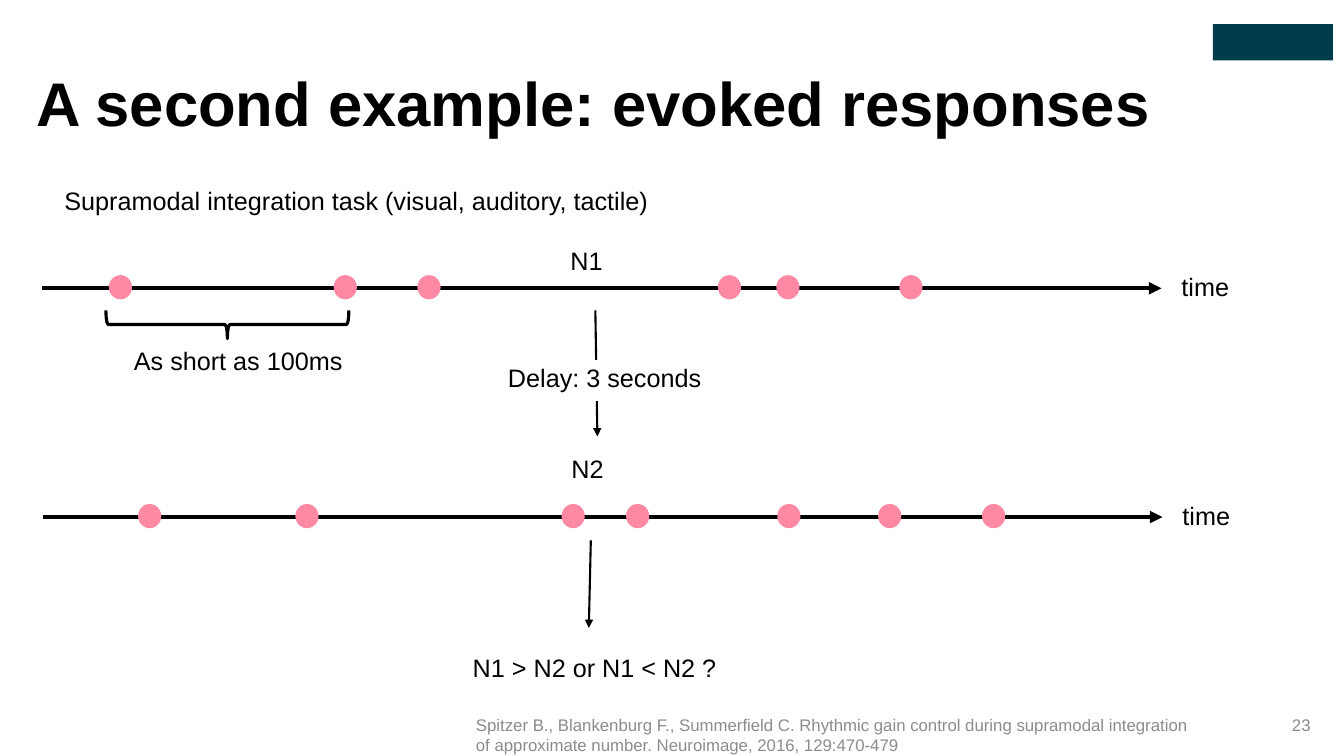
from dataclasses import dataclass

from lxml import etree
from pptx import Presentation
from pptx.dml.color import RGBColor
from pptx.enum.shapes import MSO_CONNECTOR, MSO_SHAPE
from pptx.enum.text import MSO_ANCHOR, MSO_AUTO_SIZE, PP_ALIGN
from pptx.oxml.ns import qn
from pptx.util import Inches, Pt

STRAIGHT = MSO_CONNECTOR.STRAIGHT
RECTANGLE, OVAL, BRACE = MSO_SHAPE.RECTANGLE, MSO_SHAPE.OVAL, MSO_SHAPE.RIGHT_BRACE
TOP, NO_FIT = MSO_ANCHOR.TOP, MSO_AUTO_SIZE.NONE
LEFT, RIGHT = PP_ALIGN.LEFT, PP_ALIGN.RIGHT
TITLE_ONLY = 5


@dataclass(frozen=True)
class Theme:
    font: str = "Arial"
    ink: RGBColor = RGBColor(0, 0, 0)
    paper: RGBColor = RGBColor(255, 255, 255)
    stimulus: RGBColor = RGBColor(0xFF, 0x88, 0xA4)
    badge: RGBColor = RGBColor(0, 0x3D, 0x4C)
    muted: RGBColor = RGBColor(0x8C, 0x8C, 0x8C)
    title_size: int = 44
    body_size: int = 18
    footer_size: int = 12
    axis_width: float = 3
    brace_width: float = 2.25
    arrow_width: float = 1.5


@dataclass(frozen=True)
class Box:
    """A region in inches; inner boxes are given relative to its corner."""
    left: float
    top: float
    width: float
    height: float

    def inner(self, left, top, width, height):
        return Box(self.left + left, self.top + top, width, height)

    def emu(self):
        return [Inches(value) for value in (self.left, self.top, self.width, self.height)]


THEME = Theme()
DOT_WIDTH, DOT_HEIGHT = 0.23, 0.24
LABEL_WIDTH, LABEL_HEIGHT = 3, 0.4


def style_text(text_frame, text, size, color=THEME.ink, align=LEFT, bold=False, inset=None):
    text_frame.text = text
    text_frame.word_wrap = True
    text_frame.auto_size = NO_FIT
    text_frame.vertical_anchor = TOP
    if inset is not None:
        text_frame.margin_left = text_frame.margin_right = Inches(inset)
        text_frame.margin_top = text_frame.margin_bottom = Inches(inset)
    paragraph = text_frame.paragraphs[0]
    paragraph.alignment = align
    font = paragraph.runs[0].font
    font.name, font.size, font.bold = THEME.font, Pt(size), bold
    font.color.rgb = color


def add_label(slide, box, text, size=THEME.body_size, **style):
    style_text(slide.shapes.add_textbox(*box.emu()).text_frame, text, size, **style)


def add_plain_shape(slide, kind, box, fill=None, line=None, line_width=1):
    shape = slide.shapes.add_shape(kind, *box.emu())
    shape.shadow.inherit = False
    if fill is None:
        shape.fill.background()
    else:
        shape.fill.solid()
        shape.fill.fore_color.rgb = fill
    if line is None:
        shape.line.fill.background()
    else:
        shape.line.color.rgb = line
        shape.line.width = Pt(line_width)
    return shape


def add_arrow(slide, start, end, width=THEME.arrow_width):
    points = [Inches(value) for value in (*start, *end)]
    connector = slide.shapes.add_connector(STRAIGHT, *points)
    connector.line.color.rgb = THEME.ink
    connector.line.width = Pt(width)
    etree.SubElement(connector.line._get_or_add_ln(), qn("a:tailEnd"), type="triangle")
    etree.SubElement(connector._element.spPr, qn("a:effectLst"))


def add_header(slide, box):
    title = slide.shapes.title
    title.left, title.top, title.width, title.height = box.inner(0, 0.49, 12.85, 0.81).emu()
    style_text(title.text_frame, "A second example: evoked responses",
               THEME.title_size, bold=True, inset=0)
    title.text_frame.paragraphs[0].line_spacing = 0.9
    add_plain_shape(slide, RECTANGLE, box.inner(11.67, 0, 1.19, 0.36), THEME.badge)


def add_timeline(slide, box, name, stimuli):
    """Draw a named time axis; stimuli are dot offsets from its start."""
    axis = box.top + 0.48
    add_arrow(slide, (box.left, axis), (box.left + box.width, axis), THEME.axis_width)
    for offset in stimuli:
        add_plain_shape(slide, OVAL, box.inner(offset, 0.35, DOT_WIDTH, DOT_HEIGHT),
                        THEME.stimulus)
    add_label(slide, box.inner(box.width + 0.1, 0.26, 0.8, LABEL_HEIGHT), "time")
    add_label(slide, box.inner(5.14, 0, LABEL_WIDTH, LABEL_HEIGHT), name)


def add_interval_note(slide, box):
    """Bracket the box's width from below; the brace is drawn upright, then turned."""
    depth = 0.28
    upright = box.inner((box.width - depth) / 2, (depth - box.width) / 2, depth, box.width)
    brace = add_plain_shape(slide, BRACE, upright, line=THEME.ink,
                            line_width=THEME.brace_width)
    brace.rotation = 90
    add_label(slide, box.inner(0.18, 0.3, LABEL_WIDTH, LABEL_HEIGHT), "As short as 100ms")


def add_delay(slide, box):
    middle = box.left + box.width / 2
    add_arrow(slide, (middle - 0.28, box.top), (middle - 0.26, box.top + box.height))
    add_plain_shape(slide, RECTANGLE, box.inner(0, 0.5, box.width, 0.39),
                    THEME.paper, THEME.paper)
    add_label(slide, box.inner(-0.02, 0.47, LABEL_WIDTH, LABEL_HEIGHT), "Delay: 3 seconds")


def add_decision(slide, box):
    add_arrow(slide, (box.left + 1.27, box.top), (box.left + 1.25, box.top + 0.87))
    add_label(slide, box.inner(0, 1.06, box.width, LABEL_HEIGHT), "N1 > N2 or N1 < N2 ?")


def add_footer(slide, box):
    footer_style = {"size": THEME.footer_size, "color": THEME.muted, "inset": 0}
    add_label(slide, box.inner(0, 0, 7.09, box.height),
              "Spitzer B., Blankenburg F., Summerfield C. Rhythmic gain control during "
              "supramodal integration of approximate number. Neuroimage, 2016, 129:470-479",
              **footer_style)
    add_label(slide, box.inner(box.width - 0.84, 0, 0.84, 0.3), "23",
              align=RIGHT, **footer_style)


def main():
    presentation = Presentation()
    presentation.slide_width, presentation.slide_height = Inches(13.33), Inches(7.5)
    slide = presentation.slides.add_slide(presentation.slide_layouts[TITLE_ONLY])
    add_header(slide, Box(0.36, 0.24, 12.86, 1.3))
    add_label(slide, Box(0.54, 1.79, 7.02, LABEL_HEIGHT),
              "Supramodal integration task (visual, auditory, tactile)")
    add_delay(slide, Box(4.96, 3.08, 2.45, 1.25))
    add_timeline(slide, Box(0.42, 2.38, 11.1, 0.7), "N1",
                 (0.66, 2.89, 3.72, 6.7, 7.28, 8.5))
    add_timeline(slide, Box(0.43, 4.65, 11.1, 0.7), "N2",
                 (0.94, 2.5, 5.14, 5.78, 7.28, 8.28, 9.31))
    # The second label sits higher above its axis than the first.
    slide.shapes[-1].top = Inches(4.45)
    add_interval_note(slide, Box(1.05, 3.08, 2.41, 0.7))
    add_decision(slide, Box(4.59, 5.36, LABEL_WIDTH, 1.46))
    add_footer(slide, Box(4.72, 7.09, 8.28, 0.39))
    presentation.save("out.pptx")


if __name__ == "__main__":
    main()
